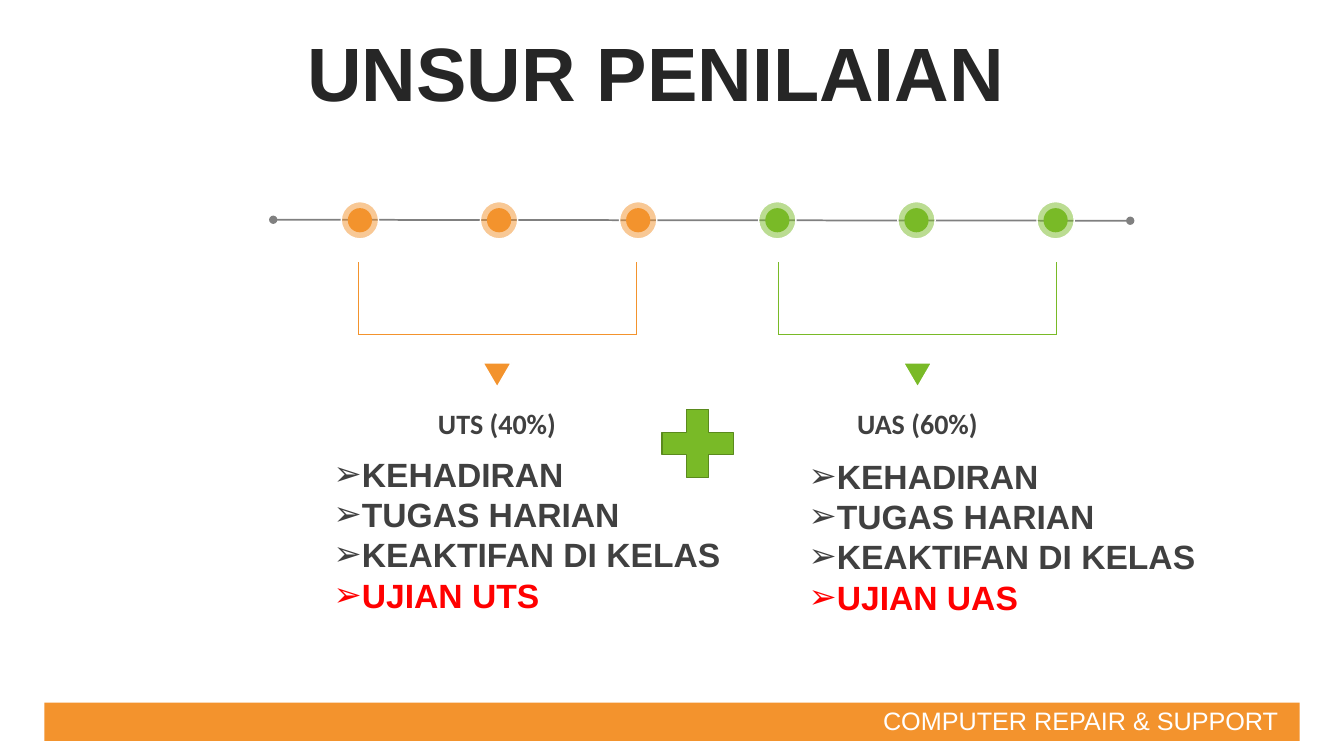
from lxml.etree import SubElement
from pptx import Presentation
from pptx.dml.color import RGBColor
from pptx.enum.shapes import MSO_CONNECTOR, MSO_SHAPE
from pptx.enum.text import MSO_ANCHOR, MSO_AUTO_SIZE, PP_ALIGN
from pptx.oxml.ns import qn
from pptx.util import Inches, Pt

COLORS = {
    "orange": "F3932D",
    "green": "79BA27",
    "dark_green": "5A8A1D",
    "gray": "808080",
    "title": "262626",
    "text": "404040",
    "red": "FF0000",
    "white": "FFFFFF",
}
DOT_STEP = 1.38
TIMELINE_Y = 2.185


def rgb(name):
    return RGBColor.from_string(COLORS[name])


def add_filled_shape(slide, kind, left, top, width, height, fill, line=None, opacity=None):
    shape = slide.shapes.add_shape(
        kind, Inches(left), Inches(top), Inches(width), Inches(height))
    shape.shadow.inherit = False
    shape.fill.solid()
    shape.fill.fore_color.rgb = rgb(fill)
    if opacity is not None:
        color = shape.fill._xPr.find(qn("a:solidFill"))[0]
        SubElement(color, qn("a:alpha"), val=str(opacity * 1000))
    if line:
        shape.line.color.rgb = rgb(line)
        shape.line.width = Pt(1)
    else:
        shape.line.fill.background()
    return shape


def add_line(slide, start, end, color, width, oval_ends=False):
    connector = slide.shapes.add_connector(
        MSO_CONNECTOR.STRAIGHT, *(Inches(value) for value in (*start, *end)))
    connector.line.color.rgb = rgb(color)
    connector.line.width = Pt(width)
    if oval_ends:
        line = connector.line._get_or_add_ln()
        for tag in ("a:headEnd", "a:tailEnd"):
            SubElement(line, qn(tag), type="oval")
    SubElement(connector._element.spPr, qn("a:effectLst"))


def add_text_box(slide, left, top, width, height, side_margin=0):
    box = slide.shapes.add_textbox(
        Inches(left), Inches(top), Inches(width), Inches(height))
    frame = box.text_frame
    frame.word_wrap = True
    frame.margin_left = frame.margin_right = Inches(side_margin)
    return frame


def add_run(paragraph, text, size, color, bold=True, font="Arial"):
    run = paragraph.add_run()
    run.text = text
    run.font.name = font
    run.font.size = Pt(size)
    run.font.bold = bold
    run.font.color.rgb = rgb(color)


def add_arrow_bullet(paragraph):
    properties = paragraph._p.get_or_add_pPr()
    indent = Inches(0.26)
    properties.set("marL", str(indent))
    properties.set("indent", str(-indent))
    SubElement(properties, qn("a:buFont"), typeface="Arial")
    SubElement(properties, qn("a:buChar"), char="➢")


def set_title(slide, text):
    title = slide.shapes.title
    title.left, title.top = Inches(0), Inches(0.37)
    title.width, title.height = Inches(13.01), Inches(0.79)
    frame = title.text_frame
    frame.vertical_anchor = MSO_ANCHOR.MIDDLE
    frame.auto_size = MSO_AUTO_SIZE.NONE
    paragraph = frame.paragraphs[0]
    paragraph.alignment = PP_ALIGN.CENTER
    paragraph.line_spacing = 0.9
    add_run(paragraph, text, 54, "title")


def add_footer(slide, text):
    add_filled_shape(slide, MSO_SHAPE.RECTANGLE, 0.44, 6.97, 12.45, 0.38, "orange")
    frame = add_text_box(slide, 8.66, 6.95, 4.23, 0.4, side_margin=0.1)
    frame.vertical_anchor = MSO_ANCHOR.MIDDLE
    add_run(frame.paragraphs[0], text, 18, "white", bold=False)


def add_timeline_dot(slide, center, color):
    """Draw a solid dot inside a half-transparent ring."""
    for size, line, opacity in ((0.37, "white", 50), (0.24, None, None)):
        add_filled_shape(slide, MSO_SHAPE.OVAL, center - size / 2, TIMELINE_Y - size / 2,
                         size, size, color, line, opacity)


def add_bracket(slide, left, right, color):
    top, bottom = 2.6, 3.32
    corners = [(left, top), (left, bottom), (right, bottom), (right, top)]
    for start, end in zip(corners, corners[1:]):
        add_line(slide, start, end, color, 0.5)


def add_exam_part(slide, heading, exam, color, first_dot, bracket_left, list_box):
    """Draw three dots, their bracket and the list of what is assessed."""
    for index in range(3):
        add_timeline_dot(slide, first_dot + index * DOT_STEP, color)
    bracket_right = bracket_left + 2 * DOT_STEP
    center = (bracket_left + bracket_right) / 2
    add_bracket(slide, bracket_left, bracket_right, color)

    pointer = add_filled_shape(slide, MSO_SHAPE.ISOSCELES_TRIANGLE, center - 0.14, 3.6,
                               0.28, 0.24, color, "white")
    pointer.rotation = 180

    heading_paragraph = add_text_box(slide, center - 1.12, 3.98, 2.24, 0.44).paragraphs[0]
    heading_paragraph.alignment = PP_ALIGN.CENTER
    add_run(heading_paragraph, heading, 20, "text", font="Calibri")

    frame = add_text_box(slide, *list_box)
    items = ["KEHADIRAN", "TUGAS HARIAN", "KEAKTIFAN DI KELAS", exam]
    for index, item in enumerate(items):
        paragraph = frame.add_paragraph() if index else frame.paragraphs[0]
        add_arrow_bullet(paragraph)
        add_run(paragraph, item, 24, "red" if item == exam else "text")


def main():
    presentation = Presentation()
    presentation.slide_width = Inches(13.33)
    presentation.slide_height = Inches(7.5)
    slide = presentation.slides.add_slide(presentation.slide_layouts[5])

    add_footer(slide, "COMPUTER REPAIR & SUPPORT")
    set_title(slide, "UNSUR PENILAIAN")
    add_line(slide, (2.71, 2.18), (11.21, 2.19), "gray", 1.25, oval_ends=True)
    add_exam_part(slide, "UTS (40%)", "UJIAN UTS", "orange", 3.57, 3.55,
                  (3.31, 4.45, 4.56, 1.72))
    add_exam_part(slide, "UAS (60%)", "UJIAN UAS", "green", 3.57 + 3 * DOT_STEP, 7.72,
                  (8.02, 4.47, 4.38, 1.72))
    add_filled_shape(slide, MSO_SHAPE.MATH_PLUS, 6.44, 3.94, 0.96, 0.92,
                     "green", "dark_green")
    presentation.save("out.pptx")


if __name__ == "__main__":
    main()
